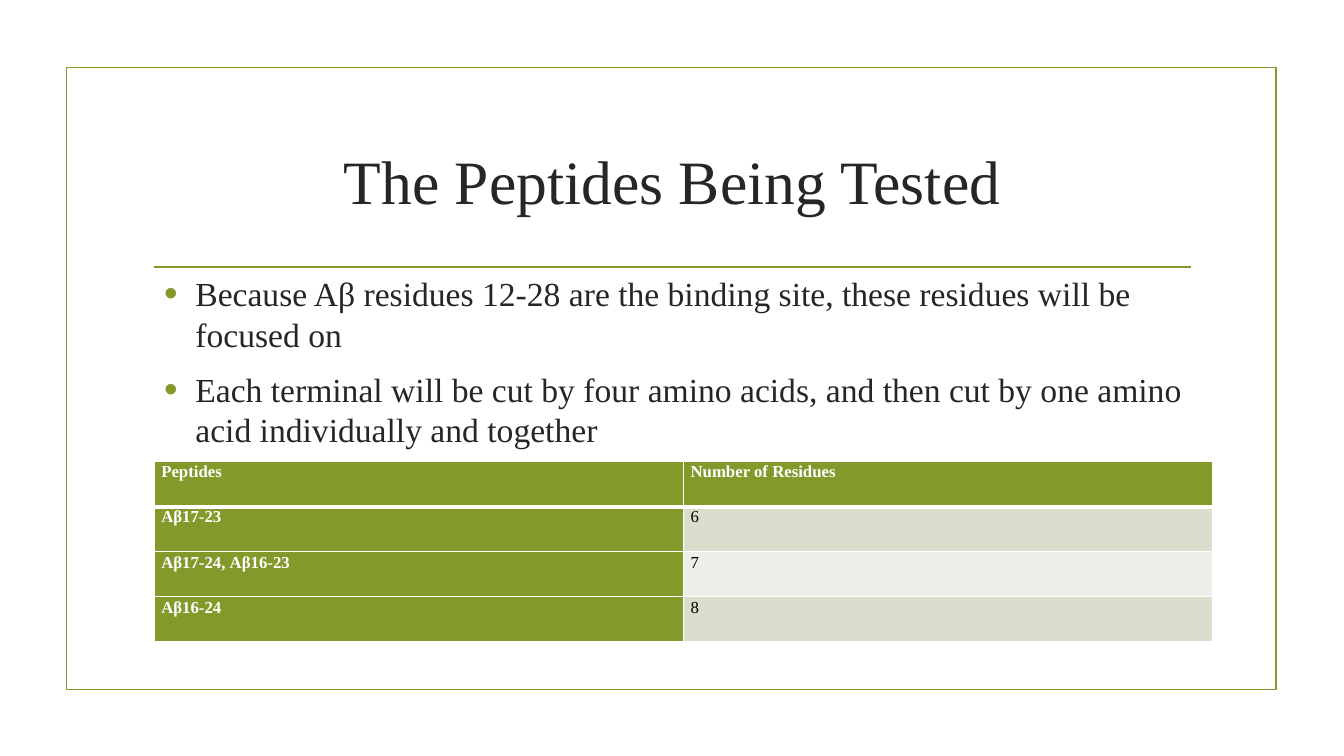
from lxml.etree import SubElement
from pptx import Presentation
from pptx.dml.color import RGBColor
from pptx.enum.shapes import MSO_CONNECTOR, MSO_SHAPE
from pptx.enum.text import MSO_ANCHOR, PP_ALIGN
from pptx.oxml.ns import qn
from pptx.util import Inches, Pt

COLORS = {"green": "83992A", "text": "262626", "white": "FFFFFF", "black": "000000",
          "band_dark": "D9DECD", "band_light": "EDEFE8"}
FONT = "Times New Roman"
TITLE = "The Peptides Being Tested"
BULLETS = [
    "Because Aβ residues 12-28 are the binding site, these residues will be focused on",
    "Each terminal will be cut by four amino acids, and then cut by one amino acid "
    "individually and together",
]
PEPTIDE_ROWS = [
    ("Peptides", "Number of Residues"),
    ("Aβ17-23", "6"),
    ("Aβ17-24, Aβ16-23", "7"),
    ("Aβ16-24", "8"),
]


def color(name):
    return RGBColor.from_string(COLORS[name])


def apply_format(target, values):
    for name, value in values.items():
        setattr(target, name, value)


def style_font(font, size, color_name, bold=False):
    apply_format(font, {"name": FONT, "size": Pt(size), "bold": bold})
    font.color.rgb = color(color_name)


def style_line(line):
    line.color.rgb = color("green")
    line.width = Pt(1.25)


def add_frame(page):
    frame = page.shapes.add_shape(MSO_SHAPE.RECTANGLE, Inches(0.66), Inches(0.67),
                                  Inches(12), Inches(6.17))
    frame.shadow.inherit = False
    frame.fill.background()
    style_line(frame.line)


def add_rule(page):
    rule = page.shapes.add_connector(MSO_CONNECTOR.STRAIGHT, Inches(1.53), Inches(2.65),
                                     Inches(11.81), Inches(2.65))
    style_line(rule.line)
    SubElement(rule._element.spPr, qn("a:effectLst"))


def add_title(page):
    box = page.shapes.add_textbox(Inches(1.42), Inches(1.07), Inches(10.5), Inches(1.43))
    apply_format(box.text_frame, {"word_wrap": True, "vertical_anchor": MSO_ANCHOR.MIDDLE})
    para = box.text_frame.paragraphs[0]
    apply_format(para, {"text": TITLE, "alignment": PP_ALIGN.CENTER})
    style_font(para.font, 44, "text")


def add_bullet(para):
    """Give the paragraph a hanging green dot."""
    properties = para._p.get_or_add_pPr()
    properties.set("marL", str(Inches(0.31)))
    properties.set("indent", str(-Inches(0.31)))
    bullet_color = SubElement(properties, qn("a:buClr"))
    SubElement(bullet_color, qn("a:srgbClr"), val=COLORS["green"])
    SubElement(properties, qn("a:buSzPct"), val="115000")
    SubElement(properties, qn("a:buFont"), typeface="Arial")
    SubElement(properties, qn("a:buChar"), char="•")


def add_bullets(page):
    box = page.shapes.add_textbox(Inches(1.53), Inches(2.66), Inches(10.39), Inches(4.12))
    frame = box.text_frame
    frame.word_wrap = True
    for index, text in enumerate(BULLETS):
        para = frame.add_paragraph() if index else frame.paragraphs[0]
        add_bullet(para)
        apply_format(para, {"text": text, "space_after": Pt(6),
                            "space_before": Pt(4.8 if index else 0)})
        style_font(para.font, 24, "text")


def add_borders(cell, widths):
    """Draw white borders; widths maps each side's tag to points."""
    properties = cell._tc.get_or_add_tcPr()
    for position, (tag, width) in enumerate(widths.items()):
        border = properties.makeelement(qn(tag), {"w": str(Pt(width))})
        fill = SubElement(border, qn("a:solidFill"))
        SubElement(fill, qn("a:srgbClr"), val=COLORS["white"])
        properties.insert(position, border)


def fill_cell(cell, text, row, column):
    is_heading = row == 0 or column == 0
    apply_format(cell, {"margin_left": Inches(0.07), "margin_right": Inches(0.07),
                        "margin_top": 0, "margin_bottom": 0})
    band = "band_dark" if row % 2 else "band_light"
    cell.fill.solid()
    cell.fill.fore_color.rgb = color("green" if is_heading else band)
    para = cell.text_frame.paragraphs[0]
    apply_format(para, {"text": text, "line_spacing": 1.07})
    style_font(para.font, 12, "white" if is_heading else "black", is_heading)
    add_borders(cell, {"a:lnL": 1, "a:lnR": 1, "a:lnT": 3 if row == 1 else 1,
                       "a:lnB": 3 if row == 0 else 1})


def add_peptide_table(page):
    table = page.shapes.add_table(len(PEPTIDE_ROWS), 2, Inches(1.53), Inches(4.58),
                                  Inches(10.5), Inches(1.79)).table
    for row, texts in enumerate(PEPTIDE_ROWS):
        for column, text in enumerate(texts):
            fill_cell(table.cell(row, column), text, row, column)


def main():
    deck = Presentation()
    apply_format(deck, {"slide_width": Inches(13.33), "slide_height": Inches(7.5)})
    page = deck.slides.add_slide(deck.slide_layouts[6])
    add_frame(page)
    add_rule(page)
    add_title(page)
    add_bullets(page)
    add_peptide_table(page)
    deck.save("out.pptx")


if __name__ == "__main__":
    main()
